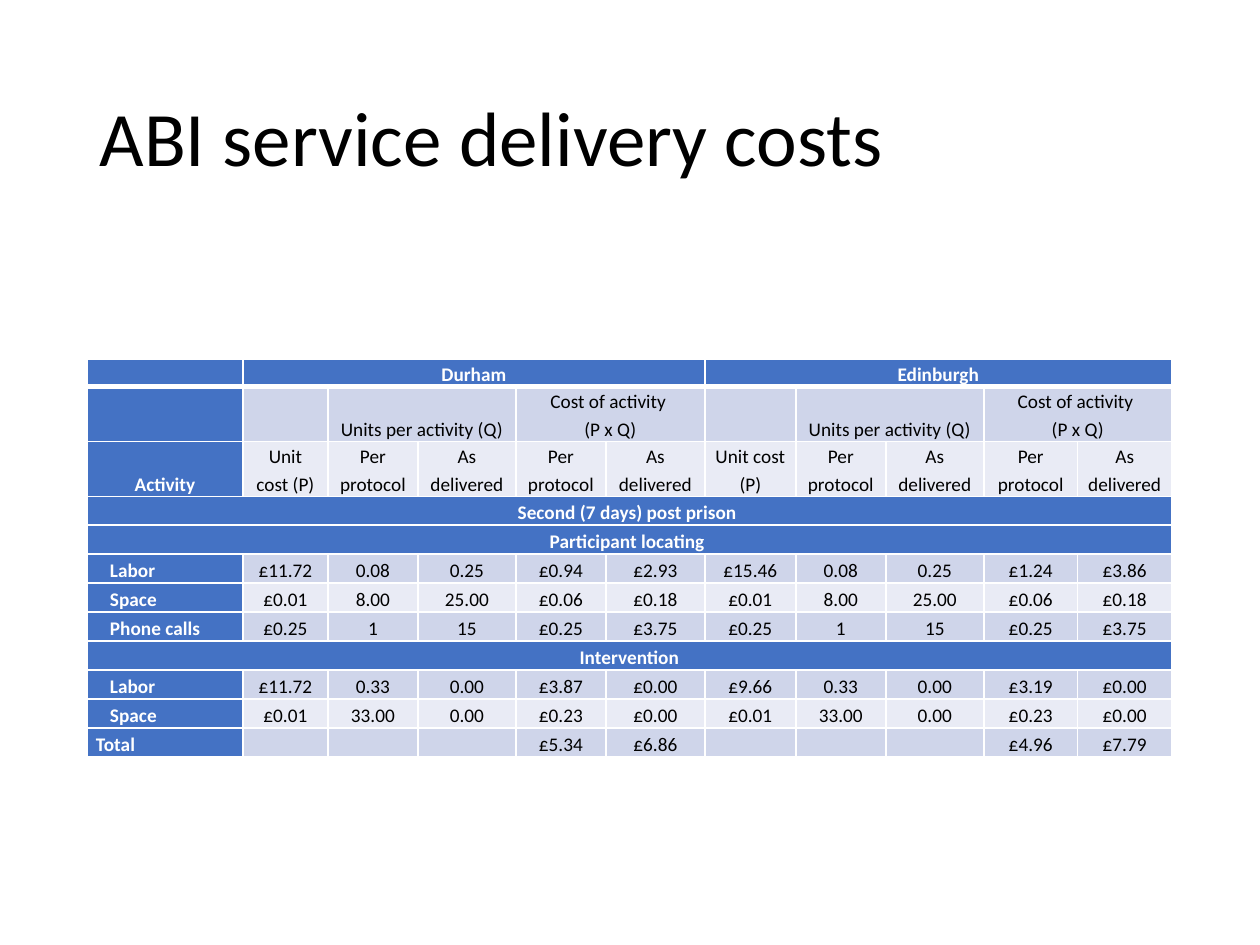
from dataclasses import dataclass

from lxml import etree
from pptx import Presentation
from pptx import util as u
from pptx.dml.color import RGBColor
from pptx.enum import text
from pptx.oxml.ns import qn

TITLE = "ABI service delivery costs"
TITLE_BOX = (87, 50, 1086, 183)
TABLE_ORIGIN = (87, 359)
COLUMN_WIDTHS = [156, 85, 90, 98, 90, 99, 91, 90, 98, 94, 94]
ROW_HEIGHTS = [27, 55, 55] + [29] * 9

SITES = ["Durham", "Edinburgh"]
GROUPS = ["", "Units per activity (Q)", None, "Cost of activity \n(P x Q)", None]
MEASURES = ["Unit cost (P)"] + ["Per protocol", "As delivered"] * 2


def banner(label):
    return [label] + [None] * 10


ROWS = [
    [""] + [entry for site in SITES for entry in [site] + [None] * 4],
    [""] + GROUPS * 2,
    ["Activity"] + MEASURES * 2,
    banner("Second (7 days) post prison "),
    banner("Participant locating "),
    ["Labor", "£11.72", "0.08", "0.25", "£0.94", "£2.93", "£15.46", "0.08", "0.25", "£1.24", "£3.86"],
    ["Space", "£0.01", "8.00", "25.00", "£0.06", "£0.18", "£0.01", "8.00", "25.00", "£0.06", "£0.18"],
    ["Phone calls", "£0.25", "1", "15", "£0.25", "£3.75", "£0.25", "1", "15", "£0.25", "£3.75"],
    banner("Intervention"),
    ["Labor", "£11.72", "0.33", "0.00", "£3.87", "£0.00", "£9.66", "0.33", "0.00", "£3.19", "£0.00"],
    ["Space", "£0.01", "33.00", "0.00", "£0.23", "£0.00", "£0.01", "33.00", "0.00", "£0.23", "£0.00"],
    ["Total", "", "", "", "£5.34", "£6.86", "", "", "", "£4.96", "£7.79"],
]
ITEMS = {"Labor", "Space", "Phone calls"}


@dataclass(frozen=True)
class Theme:
    font: str = "Calibri"
    title_size: int = 44
    cell_size: int = 11
    ink: str = "000000"
    white: str = "FFFFFF"
    accent: str = "4472C4"
    bands: tuple = ("E9EBF5", "CFD5EA")
    rule: int = 1
    header_rule: int = 3


THEME = Theme()


def px(length):
    return u.Emu(length * 914400 // 126)


def add_span(para, words, size, color, bold=False):
    span = para.add_run()
    span.text = words
    span.font.name = THEME.font
    span.font.size = u.Pt(size)
    span.font.bold = bold
    span.font.color.rgb = RGBColor.from_string(color)


def set_borders(cell, top, bottom):
    props = cell._tc.get_or_add_tcPr()
    widths = {"a:lnL": THEME.rule, "a:lnR": THEME.rule, "a:lnT": top, "a:lnB": bottom}
    for tag, width in widths.items():
        line = etree.SubElement(props, qn(tag), w=str(u.Pt(width)))
        fill = etree.SubElement(line, qn("a:solidFill"))
        etree.SubElement(fill, qn("a:srgbClr"), val=THEME.white)


def span_length(row, start):
    end = start + 1
    while end < len(row) and row[end] is None:
        end += 1
    return end - start


def format_cell(cell, words, row, column):
    is_banner = ROWS[row][1] is None
    is_header = row == 0 or column == 0 or is_banner
    set_borders(cell,
                THEME.header_rule if row == 1 else THEME.rule,
                THEME.header_rule if row == 0 else THEME.rule)
    cell.fill.solid()
    fill = THEME.accent if is_header else THEME.bands[row % 2]
    cell.fill.fore_color.rgb = RGBColor.from_string(fill)
    cell.margin_left = cell.margin_right = px(9)
    cell.margin_top = cell.margin_bottom = 0
    cell.vertical_anchor = text.MSO_ANCHOR.BOTTOM
    para = cell.text_frame.paragraphs[0]
    para.line_spacing = 1.15
    if words in ITEMS:
        para._p.get_or_add_pPr().set("marL", str(px(14)))
    elif words != "Total":
        para.alignment = text.PP_ALIGN.CENTER
    if not words:
        para._p.get_or_add_endParaRPr().set("sz", str(THEME.cell_size * 100))
        return
    color = THEME.white if is_header else THEME.ink
    for index, part in enumerate(words.split("\n")):
        if index:
            para.add_line_break()
        add_span(para, part, THEME.cell_size, color, is_header)


def add_title(page):
    box = page.shapes.title
    box.left, box.top, box.width, box.height = map(px, TITLE_BOX)
    box.text_frame.vertical_anchor = text.MSO_ANCHOR.MIDDLE
    para = box.text_frame.paragraphs[0]
    para.alignment = text.PP_ALIGN.LEFT
    para.line_spacing = 0.9
    add_span(para, TITLE, THEME.title_size, THEME.ink)


def add_cost_table(page):
    size = (sum(COLUMN_WIDTHS), sum(ROW_HEIGHTS))
    table = page.shapes.add_table(
        len(ROWS), len(COLUMN_WIDTHS), *map(px, TABLE_ORIGIN + size)).table
    for column, width in zip(table.columns, COLUMN_WIDTHS):
        column.width = px(width)
    for row, height in zip(table.rows, ROW_HEIGHTS):
        row.height = px(height)
    for r, row in enumerate(ROWS):
        for c, words in enumerate(row):
            cell = table.cell(r, c)
            format_cell(cell, words, r, c)
            length = span_length(row, c)
            if words is not None and length > 1:
                cell.merge(table.cell(r, c + length - 1))


def main():
    deck = Presentation()
    deck.slide_width, deck.slide_height = px(1260), px(945)
    page = deck.slides.add_slide(deck.slide_layouts[5])
    add_title(page)
    add_cost_table(page)
    deck.save("out.pptx")


if __name__ == "__main__":
    main()
